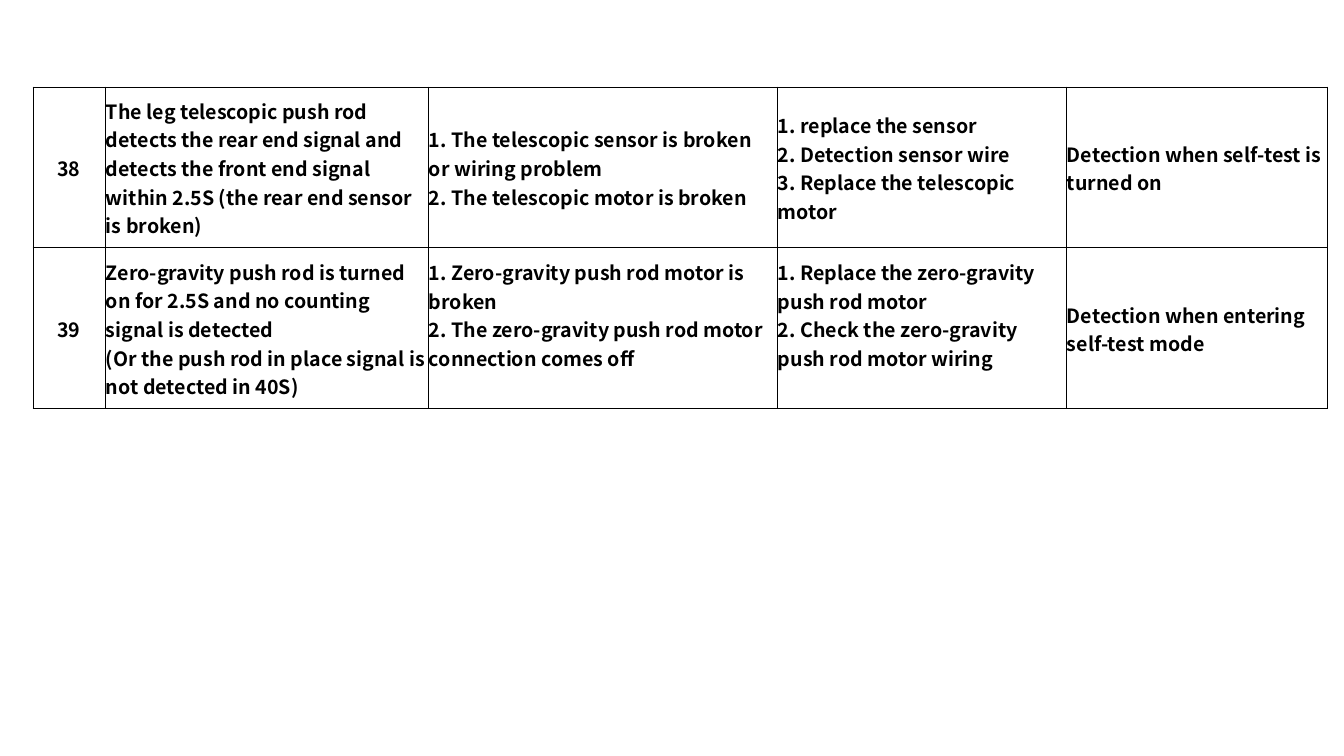
from dataclasses import dataclass

import lxml.etree
import pptx
import pptx.dml.color
import pptx.enum.text
import pptx.oxml.ns
import pptx.table
import pptx.util

SLIDE_WIDTH, SLIDE_HEIGHT = 1344, 756
EMU_PER_PX = 12192000 / SLIDE_WIDTH
TABLE_LEFT, TABLE_TOP = 33, 87
COLUMN_WIDTHS = (72, 323, 349, 289, 262)
ROW_HEIGHT = 161
CELL_INSET = 1
TEXT_LINE = 28
FONT = "Noto Sans CJK SC"
BLACK = pptx.dml.color.RGBColor(0x00, 0x00, 0x00)
BORDER_WIDTH = pptx.util.Pt(0.75)


@dataclass(frozen=True)
class Fault:
    code: str
    symptom: str
    causes: str
    remedies: str
    detection: str
    list_bottom: int = 0  # space kept free under causes and remedies


FAULTS = (
    Fault(
        "38",
        "The leg telescopic push rod detects the rear end signal and detects "
        "the front end signal within 2.5S (the rear end sensor is broken)",
        "1. The telescopic sensor is broken or wiring problem\n"
        "2. The telescopic motor is broken",
        "1. replace the sensor\n2. Detection sensor wire\n"
        "3. Replace the telescopic motor",
        "Detection when self-test is turned on",
    ),
    Fault(
        "39",
        "Zero-gravity push rod is turned on for 2.5S and no counting signal is detected\n"
        "(Or the push rod in place signal is not detected in 40S)",
        "1. Zero-gravity push rod motor is broken\n"
        "2. The zero-gravity push rod motor connection comes off",
        "1. Replace the zero-gravity push rod motor\n"
        "2. Check the zero-gravity push rod motor wiring",
        "Detection when entering self-test mode",
        list_bottom=TEXT_LINE,
    ),
)


def px(length: int) -> pptx.util.Emu:
    return pptx.util.Emu(round(length * EMU_PER_PX))


def add_borders(cell: pptx.table._Cell) -> None:
    properties = cell._tc.get_or_add_tcPr()
    qn = pptx.oxml.ns.qn
    for side in ("a:lnL", "a:lnR", "a:lnT", "a:lnB"):
        line = lxml.etree.SubElement(properties, qn(side), w=str(BORDER_WIDTH))
        fill = lxml.etree.SubElement(line, qn("a:solidFill"))
        lxml.etree.SubElement(fill, qn("a:srgbClr"), val=str(BLACK))


def write_cell(
    cell: pptx.table._Cell,
    text: str,
    *,
    align: pptx.enum.text.PP_ALIGN = pptx.enum.text.PP_ALIGN.LEFT,
    bottom: int = 0,
    size: int = 14,
    bold: bool = True,
) -> None:
    cell.margin_left = cell.margin_right = cell.margin_top = px(CELL_INSET)
    cell.margin_bottom = px(bottom)
    cell.vertical_anchor = pptx.enum.text.MSO_ANCHOR.MIDDLE
    paragraph = cell.text_frame.paragraphs[0]
    paragraph.text = text.replace("\n", "\v")
    paragraph.alignment = align
    for run in paragraph.runs:
        run.font.name = FONT
        run.font.size = pptx.util.Pt(size)
        run.font.bold = bold
        run.font.color.rgb = BLACK


def fill_row(table: pptx.table.Table, row: int, fault: Fault) -> None:
    cells = table.rows[row].cells
    write_cell(cells[0], fault.code, align=pptx.enum.text.PP_ALIGN.CENTER)
    write_cell(cells[1], fault.symptom)
    write_cell(cells[2], fault.causes, bottom=fault.list_bottom)
    write_cell(cells[3], fault.remedies, bottom=fault.list_bottom)
    write_cell(cells[4], fault.detection)
    for cell in cells:
        add_borders(cell)
        cell.fill.background()


def main() -> None:
    deck = pptx.Presentation()
    deck.slide_width, deck.slide_height = px(SLIDE_WIDTH), px(SLIDE_HEIGHT)
    slide = deck.slides.add_slide(deck.slide_layouts[6])
    fault_table = slide.shapes.add_table(
        len(FAULTS), len(COLUMN_WIDTHS), px(TABLE_LEFT), px(TABLE_TOP),
        px(sum(COLUMN_WIDTHS)), px(ROW_HEIGHT * len(FAULTS)),
    ).table
    fault_table.first_row = fault_table.horz_banding = False
    for column, width in zip(fault_table.columns, COLUMN_WIDTHS):
        column.width = px(width)
    for row, fault in enumerate(FAULTS):
        fault_table.rows[row].height = px(ROW_HEIGHT)
        fill_row(fault_table, row, fault)
    deck.save("out.pptx")


if __name__ == "__main__":
    main()
